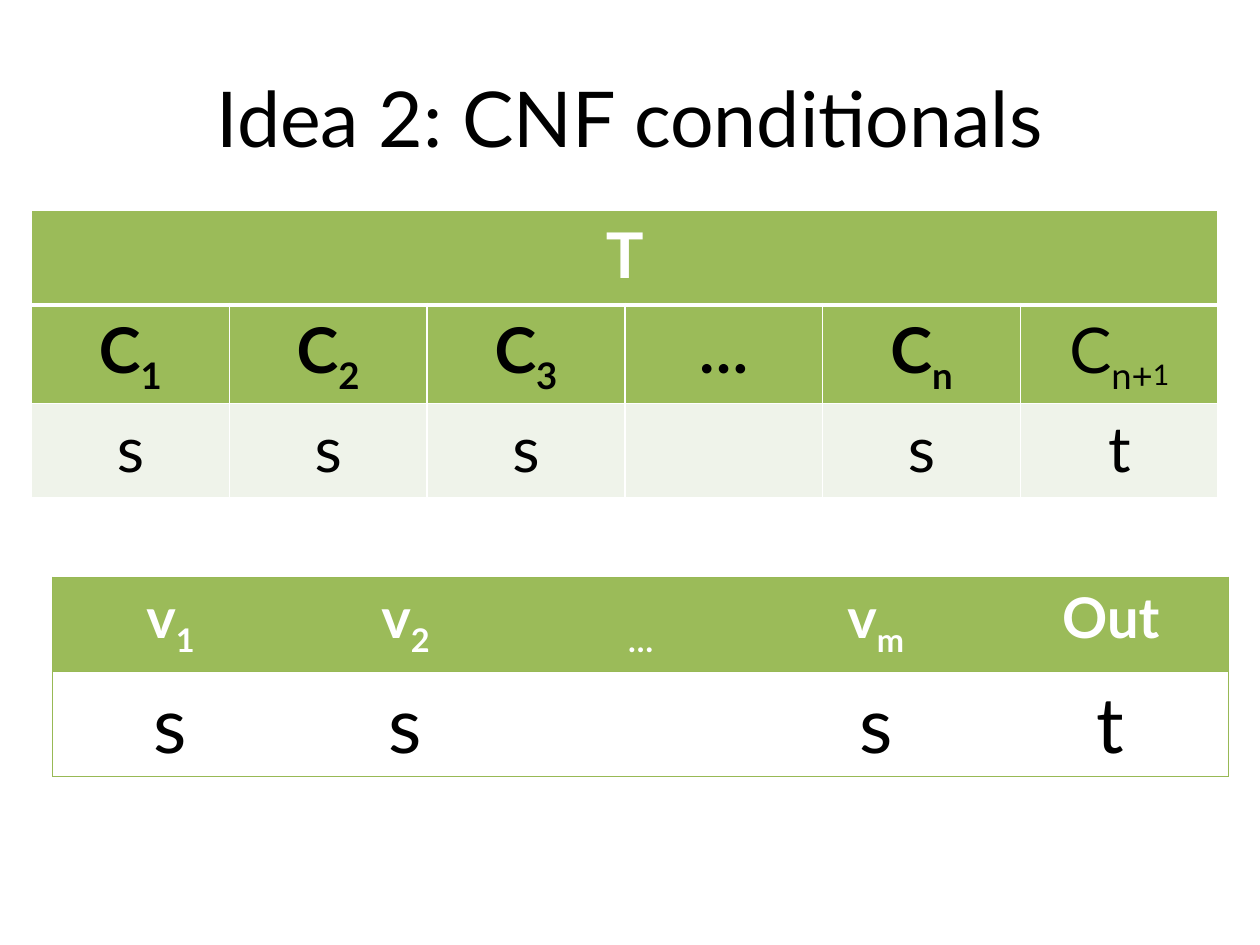
from dataclasses import dataclass

from lxml.etree import SubElement
from pptx import Presentation
from pptx.dml.color import RGBColor
from pptx.enum.text import MSO_ANCHOR, PP_ALIGN
from pptx.oxml.ns import qn
from pptx.util import Inches, Pt


@dataclass(frozen=True)
class Theme:
    font: str = "Lato"
    black: str = "000000"
    white: str = "FFFFFF"
    green: str = "9BBB59"
    edge: str = "98B955"
    pale: str = "EFF3EA"
    title: int = 44
    large: int = 36
    head: int = 32
    small: int = 28
    plain: str = "{2D5ABB26-0587-4C30-8999-92F81FD0307C}"


THEME = Theme()


def style(font, size, color, bold=False):
    font.name = THEME.font
    font.size = Pt(size)
    font.bold = bold
    font.color.rgb = RGBColor.from_string(color)


def border(cell, **sides):
    """Draw sides (L, R, T, B), each given as (colour, points)."""
    props = cell._tc.get_or_add_tcPr()
    lines = []
    for side in "LRTB":
        if side in sides:
            color, width = sides[side]
            line = SubElement(props, qn(f"a:ln{side}"), w=str(Pt(width)))
            fill = SubElement(line, qn("a:solidFill"))
            SubElement(fill, qn("a:srgbClr"), val=color)
            lines.append(line)
    # The schema wants border lines ahead of the cell fill.
    for place, line in enumerate(lines):
        props.insert(place, line)


def write(cell, text, size, color, bold=False):
    """Write text in which each part after an underscore is a subscript."""
    par = cell.text_frame.paragraphs[0]
    par.alignment = PP_ALIGN.CENTER
    style(par.font, size, color, bold)
    for level, part in enumerate(text.split("_")):
        if not part:
            continue
        run = par.add_run()
        run.text = part
        style(run.font, THEME.small if level == 2 else size, color, bold)
        if level:
            run._r.get_or_add_rPr().set("baseline", "-25000")


def add_grid(slide, box, heights, cols):
    left, top, width = box
    frame = slide.shapes.add_table(
        len(heights), cols, Inches(left), Inches(top),
        Inches(width), Inches(sum(heights)))
    table = frame.table
    table.horz_banding = False
    table.first_row = False
    table._tbl.tblPr.find(qn("a:tableStyleId")).text = THEME.plain
    for col in table.columns:
        col.width = Inches(width / cols)
    for row, height in zip(table.rows, heights):
        row.height = Inches(height)
    return table


def paint(cell, color):
    cell.fill.solid()
    cell.fill.fore_color.rgb = RGBColor.from_string(color)


def add_title(slide, box, text):
    frame = slide.shapes.add_textbox(*map(Inches, box)).text_frame
    frame.word_wrap = True
    frame.vertical_anchor = MSO_ANCHOR.MIDDLE
    par = frame.paragraphs[0]
    par.text = text
    par.alignment = PP_ALIGN.CENTER
    style(par.font, THEME.title, THEME.black)


def add_clauses(slide, box):
    names = ["C_1", "C_2", "C_3", "…", "C_n", "C_n+_1"]
    marks = ["s", "s", "s", "", "s", "t"]
    rows = [["T"] + [""] * 5, names, marks]
    fills = [THEME.green, THEME.green, THEME.pale]
    table = add_grid(slide, box, [0.75] * 3, len(names))
    thin, thick = (THEME.white, 1), (THEME.white, 3)
    for r, row in enumerate(rows):
        for c, text in enumerate(row):
            cell = table.cell(r, c)
            bold = r == 0 or (r == 1 and c < len(names) - 1)
            color = THEME.black if r else THEME.white
            write(cell, text, THEME.large, color, bold)
            paint(cell, fills[r])
            border(cell, L=thin, R=thin,
                   T=thick if r == 1 else thin,
                   B=thick if r == 0 else thin)
    table.cell(0, 0).merge(table.cell(0, len(names) - 1))


def add_values(slide, box):
    names = ["v_1", "v_2", "_…", "v_m", "Out"]
    marks = ["s", "s", "", "s", "t"]
    table = add_grid(slide, box, [0.75, 0.78], len(names))
    line = (THEME.edge, 0.75)
    for c, (name, mark) in enumerate(zip(names, marks)):
        top, low = table.cell(0, c), table.cell(1, c)
        write(top, name, THEME.head, THEME.white, True)
        write(low, mark, THEME.title, THEME.black)
        paint(top, THEME.green)
        low.fill.background()
        sides = {}
        if c == 0:
            sides["L"] = line
        if c == len(names) - 1:
            sides["R"] = line
        border(top, T=line, B=line, **sides)
        border(low, T=line, B=line, **sides)


def main():
    deck = Presentation()
    deck.slide_width, deck.slide_height = Inches(10), Inches(7.5)
    slide = deck.slides.add_slide(deck.slide_layouts[6])
    add_title(slide, (0.5, 0.3, 9, 1.25), "Idea 2: CNF conditionals")
    add_clauses(slide, (0.25, 1.67, 9.42))
    add_values(slide, (0.42, 4.58, 9.33))
    deck.save("out.pptx")


if __name__ == "__main__":
    main()
